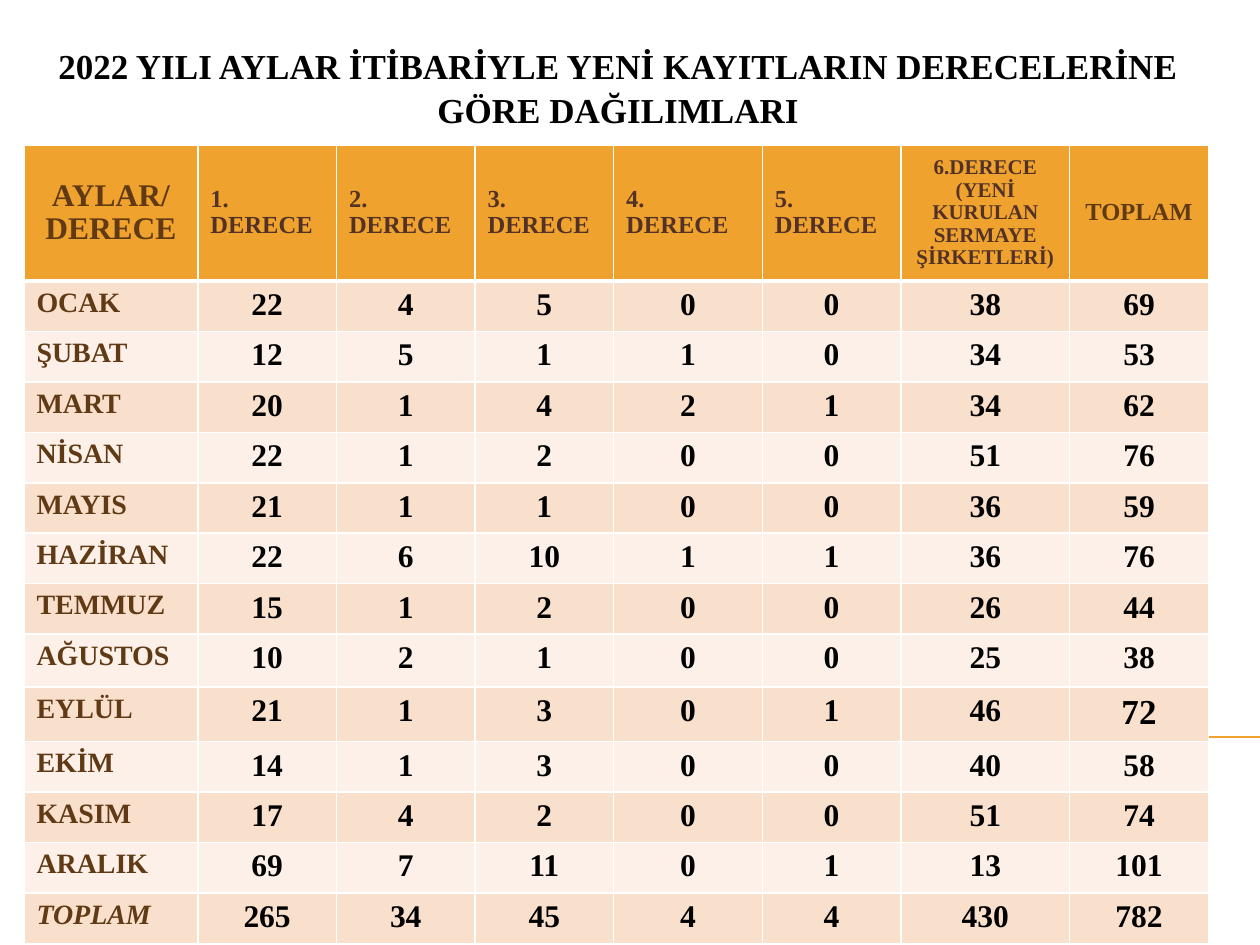
from dataclasses import dataclass

from lxml import etree
from pptx import Presentation
from pptx.dml.color import RGBColor
from pptx.enum import shapes, text
from pptx.oxml import ns
from pptx.util import Inches, Pt


@dataclass(frozen=True)
class Theme:
    font: str = "Times New Roman"
    black: str = "000000"
    brown: str = "603A14"
    dark_brown: str = "523227"
    orange: str = "F0A22E"
    bands: tuple = ("F9E0CD", "FCF0E8")
    border: str = "FFFFFF"
    title: int = 20
    large: int = 18
    month: int = 16
    degree: int = 14
    small: int = 12


THEME = Theme()
LEFT, CENTER = text.PP_ALIGN.LEFT, text.PP_ALIGN.CENTER

TITLE = "2022 YILI AYLAR İTİBARİYLE YENİ KAYITLARIN DERECELERİNE GÖRE DAĞILIMLARI"

# Heading, size, colour, alignment, column width
COLUMNS = [
    ("AYLAR/ DERECE", THEME.large, THEME.brown, CENTER, 1.38),
    *[(f"{n}. DERECE", THEME.degree, THEME.dark_brown, LEFT, 1.18 if n == 4 else 1.1)
      for n in range(1, 6)],
    ("6.DERECE (YENİ KURULAN SERMAYE ŞİRKETLERİ)", THEME.small, THEME.dark_brown, CENTER, 1.34),
    ("TOPLAM", THEME.degree, THEME.brown, CENTER, 1.1),
]
MONTHS = [
    ("OCAK", 22, 4, 5, 0, 0, 38, 69),
    ("ŞUBAT", 12, 5, 1, 1, 0, 34, 53),
    ("MART", 20, 1, 4, 2, 1, 34, 62),
    ("NİSAN", 22, 1, 2, 0, 0, 51, 76),
    ("MAYIS", 21, 1, 1, 0, 0, 36, 59),
    ("HAZİRAN", 22, 6, 10, 1, 1, 36, 76),
    ("TEMMUZ", 15, 1, 2, 0, 0, 26, 44),
    ("AĞUSTOS", 10, 2, 1, 0, 0, 25, 38),
    ("EYLÜL", 21, 1, 3, 0, 1, 46, 72),
    ("EKİM", 14, 1, 3, 0, 0, 40, 58),
    ("KASIM", 17, 4, 2, 0, 0, 51, 74),
    ("ARALIK", 69, 7, 11, 0, 1, 13, 101),
    ("TOPLAM", 265, 34, 45, 4, 4, 430, 782),
]
HEADER_HEIGHT, ROW_HEIGHT = 1.08, 0.39
TALL_ROWS = {"AĞUSTOS": 0.42, "EYLÜL": 0.42}


def style_text(paragraph, size, color, align, italic=False):
    paragraph.alignment = align
    font = paragraph.font
    font.name, font.size, font.bold, font.italic = THEME.font, Pt(size), True, italic
    font.color.rgb = RGBColor.from_string(color)


def set_borders(cell, top=1, bottom=1):
    properties = cell._tc.get_or_add_tcPr()
    widths = {"lnL": 1, "lnR": 1, "lnT": top, "lnB": bottom}
    for position, (side, width) in enumerate(widths.items()):
        line = etree.Element(ns.qn(f"a:{side}"), w=str(Pt(width)))
        fill = etree.SubElement(line, ns.qn("a:solidFill"))
        etree.SubElement(fill, ns.qn("a:srgbClr"), val=THEME.border)
        properties.insert(position, line)


def fill_cell(cell, content, fill, size, color, align, italic=False):
    cell.text = str(content)
    cell.fill.solid()
    cell.fill.fore_color.rgb = RGBColor.from_string(fill)
    style_text(cell.text_frame.paragraphs[0], size, color, align, italic)


def add_rule(slide, left, top, width):
    rule = slide.shapes.add_connector(
        shapes.MSO_CONNECTOR.STRAIGHT,
        Inches(left), Inches(top), Inches(left + width), Inches(top))
    rule.line.color.rgb = RGBColor.from_string(THEME.orange)
    rule.line.width = Pt(0.75)
    etree.SubElement(rule._element.spPr, ns.qn("a:effectLst"))


def add_title(slide, left, top, width, height):
    frame = slide.shapes.add_textbox(
        Inches(left), Inches(top), Inches(width), Inches(height)).text_frame
    frame.word_wrap = True
    frame.text = TITLE
    heading = frame.paragraphs[0]
    style_text(heading, THEME.title, THEME.black, CENTER)
    heading.line_spacing = 1.05


def add_registrations(slide, left, top):
    heights = [HEADER_HEIGHT] + [TALL_ROWS.get(row[0], ROW_HEIGHT) for row in MONTHS]
    widths = [column[-1] for column in COLUMNS]
    table = slide.shapes.add_table(
        len(heights), len(widths), Inches(left), Inches(top),
        Inches(sum(widths)), Inches(sum(heights))).table
    for column, width in zip(table.columns, widths):
        column.width = Inches(width)
    for row, height in zip(table.rows, heights):
        row.height = Inches(height)

    # Heading row
    for c, (heading, size, color, align, _) in enumerate(COLUMNS):
        cell = table.cell(0, c)
        fill_cell(cell, heading, THEME.orange, size, color, align)
        cell.vertical_anchor = text.MSO_ANCHOR.MIDDLE
        cell.text_frame.paragraphs[0].line_spacing = 0.96
        set_borders(cell, bottom=3)

    # Months and the total row
    for r, (month, *counts) in enumerate(MONTHS, start=1):
        band = THEME.bands[(r - 1) % 2]
        fill_cell(table.cell(r, 0), month, band, THEME.month, THEME.brown, LEFT,
                  italic=month == "TOPLAM")
        for c, count in enumerate(counts, start=1):
            enlarged = month == "EYLÜL" and c == len(counts)
            size = THEME.title if enlarged else THEME.large
            fill_cell(table.cell(r, c), count, band, size, THEME.black, CENTER)
        for cell in table.rows[r].cells:
            set_borders(cell, top=3 if r == 1 else 1)


def main():
    deck = Presentation()
    deck.slide_width, deck.slide_height = Inches(10), Inches(7.5)
    slide = deck.slides.add_slide(deck.slide_layouts[6])
    add_rule(slide, 0.56, 5.85, 9.44)
    add_title(slide, 0.28, 0.29, 9.25, 0.63)
    add_registrations(slide, 0.19, 1.15)
    deck.save("out.pptx")


if __name__ == "__main__":
    main()
